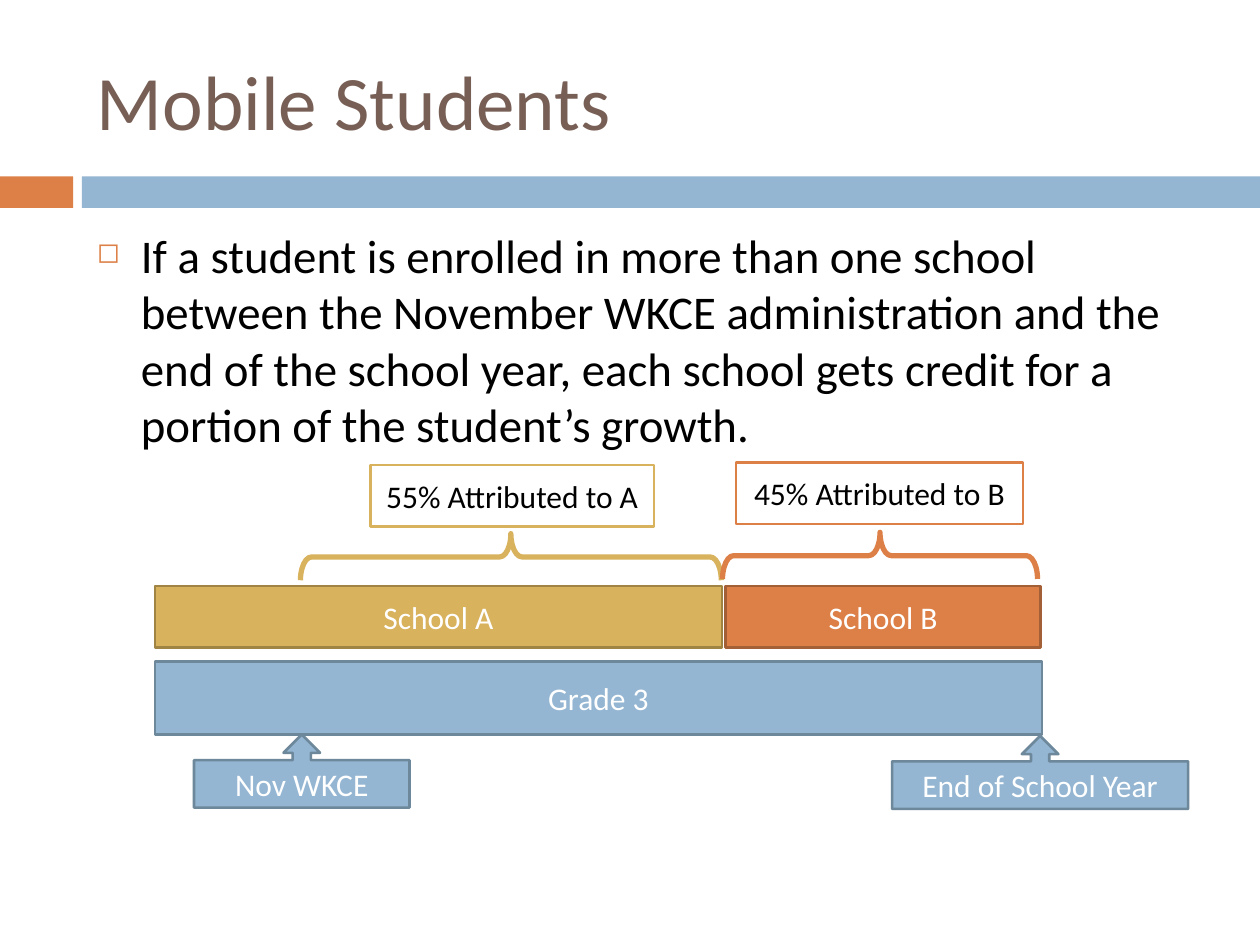
from dataclasses import dataclass

from lxml import etree
from pptx import Presentation
from pptx.dml.color import RGBColor
from pptx.enum import shapes, text
from pptx.oxml import ns
from pptx.util import Inches, Pt


@dataclass(frozen=True)
class Theme:
    font: str = "Calibri"
    title: str = "775F55"
    black: str = "000000"
    white: str = "FFFFFF"
    blue: str = "94B6D2"
    blue_edge: str = "6D879B"
    gold: str = "D8B25C"
    gold_edge: str = "A08444"
    orange: str = "DD8047"
    orange_edge: str = "A35F35"
    title_size: float = 44
    body_size: float = 26.8
    label_size: float = 18


theme = Theme()
kinds = shapes.MSO_SHAPE

prs = Presentation()
prs.slide_width, prs.slide_height = Inches(10), Inches(7.5)
slide = prs.slides.add_slide(prs.slide_layouts[6])


def set_text(s, words, size, color, align, anchor):
    tf = s.text_frame
    tf.word_wrap = True
    tf.vertical_anchor = anchor
    tf.text = words
    p = tf.paragraphs[0]
    p.alignment = align
    r = p.runs[0]
    r.font.name, r.font.size = theme.font, Pt(size)
    r.font.color.rgb = RGBColor.from_string(color)
    return p


def add_block(kind, box, fill=None, edge=None, width=1.5, label="", color=theme.white):
    s = slide.shapes.add_shape(kind, *map(Inches, box))
    s.shadow.inherit = False
    if fill:
        s.fill.solid()
        s.fill.fore_color.rgb = RGBColor.from_string(fill)
    else:
        s.fill.background()
    if edge:
        s.line.color.rgb = RGBColor.from_string(edge)
        s.line.width = Pt(width)
    else:
        s.line.fill.background()
    if label:
        set_text(s, label, theme.label_size, color,
                 text.PP_ALIGN.CENTER, text.MSO_ANCHOR.MIDDLE)
    return s


# Divider band
add_block(kinds.RECTANGLE, (0, 1.4, 0.58, 0.25), theme.orange)
add_block(kinds.RECTANGLE, (0.65, 1.4, 9.35, 0.25), theme.blue)

# Title
s = slide.shapes.add_textbox(Inches(0.67), Inches(0.25), Inches(8.92), Inches(1.08))
set_text(s, "Mobile Students", theme.title_size, theme.title,
         text.PP_ALIGN.LEFT, text.MSO_ANCHOR.MIDDLE)

# Bulleted statement
s = slide.shapes.add_textbox(Inches(0.67), Inches(1.75), Inches(8.92), Inches(1.77))
p = set_text(
    s,
    "If a student is enrolled in more than one school between the November WKCE "
    "administration and the end of the school year, each school gets credit for a "
    "portion of the student’s growth.",
    theme.body_size, theme.black, text.PP_ALIGN.LEFT, text.MSO_ANCHOR.TOP)
pPr = p._p.get_or_add_pPr()
pPr.set("marL", str(Inches(0.35)))
pPr.set("indent", str(Inches(-0.35)))
bullet_color = etree.SubElement(pPr, ns.qn("a:buClr"))
etree.SubElement(bullet_color, ns.qn("a:srgbClr"), val=theme.orange)
etree.SubElement(pPr, ns.qn("a:buSzPct"), val="60000")
etree.SubElement(pPr, ns.qn("a:buChar"), char="◻")

# Grade and school bars
bars = [
    ("Grade 3", (1.23, 5.25, 7.04, 0.58), theme.blue, theme.blue_edge),
    ("School A", (1.23, 4.65, 4.5, 0.49), theme.gold, theme.gold_edge),
    ("School B", (5.76, 4.65, 2.5, 0.49), theme.orange, theme.orange_edge),
]
for label, box, fill, edge in bars:
    add_block(kinds.RECTANGLE, box, fill, edge, label=label)

# Date markers
for label, box in [("Nov WKCE", (1.54, 5.83, 1.71, 0.58)),
                   ("End of School Year", (7.08, 5.84, 2.35, 0.58))]:
    add_block(kinds.UP_ARROW_CALLOUT, box, theme.blue, theme.blue_edge, label=label)

# Braces, turned to point up at the attribution labels
for box, color in [((3.87, 2.75, 0.37, 3.34), theme.gold),
                   ((6.8, 3.16, 0.37, 2.5), theme.orange)]:
    s = add_block(kinds.RIGHT_BRACE, box, edge=color, width=3)
    s.adjustments[0], s.adjustments[1] = 0.24, 0.5
    s.rotation = 90
    s._element.spPr.find(ns.qn("a:xfrm")).set("flipH", "1")

# Attribution labels
for label, box, color in [
    ("45% Attributed to B", (5.84, 3.67, 2.28, 0.49), theme.orange),
    ("55% Attributed to A", (2.94, 3.69, 2.25, 0.49), theme.gold),
]:
    add_block(kinds.RECTANGLE, box, theme.white, color, label=label, color=theme.black)

prs.save("out.pptx")
